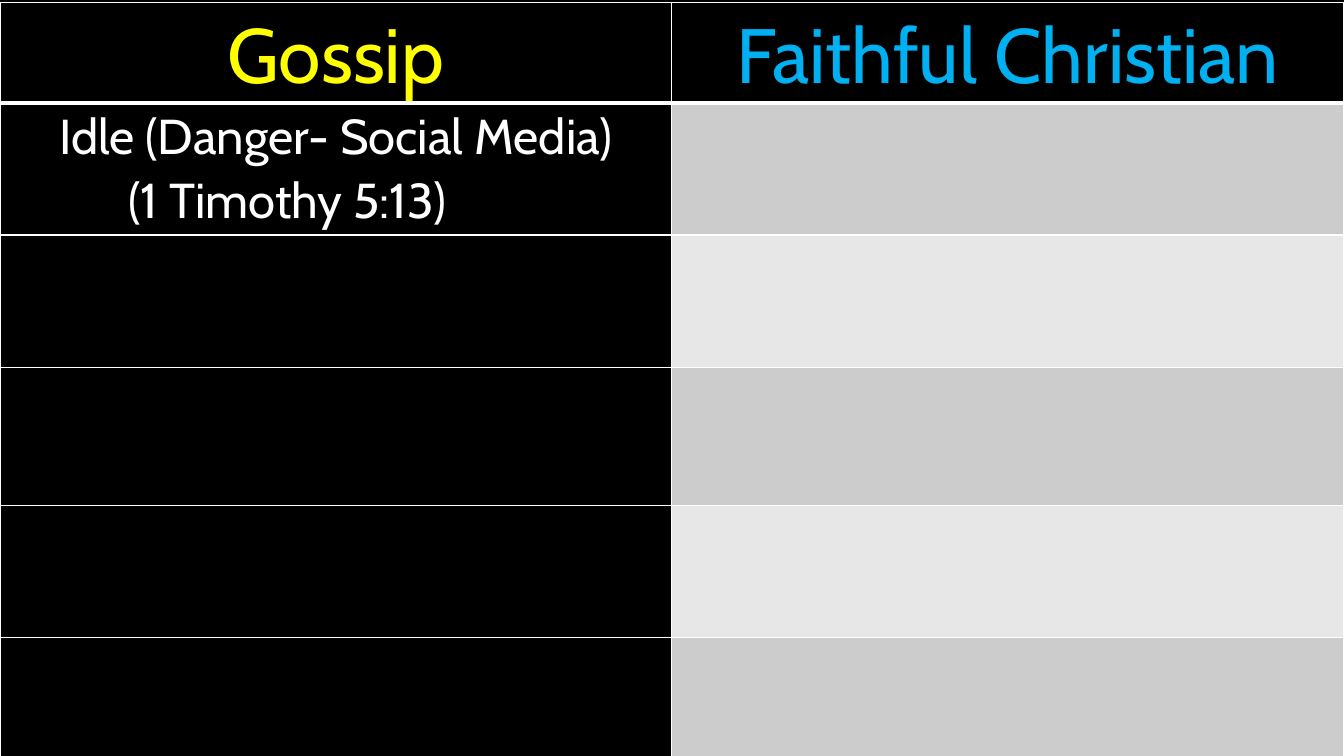
from dataclasses import dataclass

from lxml import etree
from pptx import Presentation
from pptx.dml.color import RGBColor
from pptx.enum.text import MSO_ANCHOR, PP_ALIGN
from pptx.oxml.ns import qn
from pptx.table import _Cell
from pptx.util import Cm, Pt

CENTER = PP_ALIGN.CENTER
LEFT = PP_ALIGN.LEFT
TOP = MSO_ANCHOR.TOP

BLACK = RGBColor(0x00, 0x00, 0x00)
WHITE = RGBColor(0xFF, 0xFF, 0xFF)
YELLOW = RGBColor(0xFF, 0xFF, 0x00)
BLUE = RGBColor(0x00, 0xB0, 0xF0)
BANDS = (RGBColor(0xE7, 0xE7, 0xE7), RGBColor(0xCC, 0xCC, 0xCC))

FONT = "Cabin"
COL_WIDTH = Cm(16.93)
ROW_HEIGHTS = [Cm(h) for h in (2.44, 3.33, 3.33, 3.48, 3.33, 3.58)]


@dataclass
class Line:
    text: str
    size: int
    color: RGBColor
    align: PP_ALIGN = CENTER
    indent: float = 0


CONTENT: dict[tuple[int, int], list[Line]] = {
    (0, 0): [Line("Gossip", 55, YELLOW)],
    (0, 1): [Line("Faithful Christian", 55, BLUE)],
    (1, 0): [
        Line("Idle (Danger- Social Media)", 35, WHITE),
        Line("(1 Timothy 5:13)", 35, WHITE, LEFT, 3.05),
    ],
}


def set_border(cell: _Cell, side: str, width: float) -> None:
    tcPr = cell._tc.get_or_add_tcPr()
    ln = etree.SubElement(tcPr, qn(f"a:ln{side}"), w=str(Pt(width)))
    fill = etree.SubElement(ln, qn("a:solidFill"))
    etree.SubElement(fill, qn("a:srgbClr"), val=str(WHITE))


def write_lines(cell: _Cell, lines: list[Line]) -> None:
    tf = cell.text_frame
    for i, line in enumerate(lines):
        p = tf.add_paragraph() if i else tf.paragraphs[0]
        p.alignment = line.align
        p.line_spacing = 1.07
        if line.indent:
            p._p.get_or_add_pPr().set("marL", str(Cm(line.indent)))
        r = p.add_run()
        r.text = line.text
        r.font.name = FONT
        r.font.size = Pt(line.size)
        r.font.bold = False
        r.font.color.rgb = line.color


def format_cell(cell: _Cell, row: int, col: int) -> None:
    cell.margin_left = cell.margin_right = Cm(0.18)
    cell.margin_top = cell.margin_bottom = 0
    cell.vertical_anchor = TOP
    widths = {"L": 1, "R": 1, "T": 3 if row == 1 else 1, "B": 3 if row == 0 else 1}
    for side, width in widths.items():
        set_border(cell, side, width)
    cell.fill.solid()
    cell.fill.fore_color.rgb = BLACK if row == 0 or col == 0 else BANDS[row % 2]
    write_lines(cell, CONTENT.get((row, col), []))


def main() -> None:
    prs = Presentation()
    prs.slide_width, prs.slide_height = Cm(33.87), Cm(19.05)
    s = prs.slides.add_slide(prs.slide_layouts[6])
    s.background.fill.solid()
    s.background.fill.fore_color.rgb = BLACK

    table = s.shapes.add_table(
        len(ROW_HEIGHTS), 2, 0, Cm(0.07), 2 * COL_WIDTH, sum(ROW_HEIGHTS)
    ).table
    table.horz_banding = False
    for column in table.columns:
        column.width = COL_WIDTH
    for row, height in enumerate(ROW_HEIGHTS):
        table.rows[row].height = height
        for col in range(2):
            format_cell(table.cell(row, col), row, col)

    prs.save("out.pptx")


if __name__ == "__main__":
    main()
